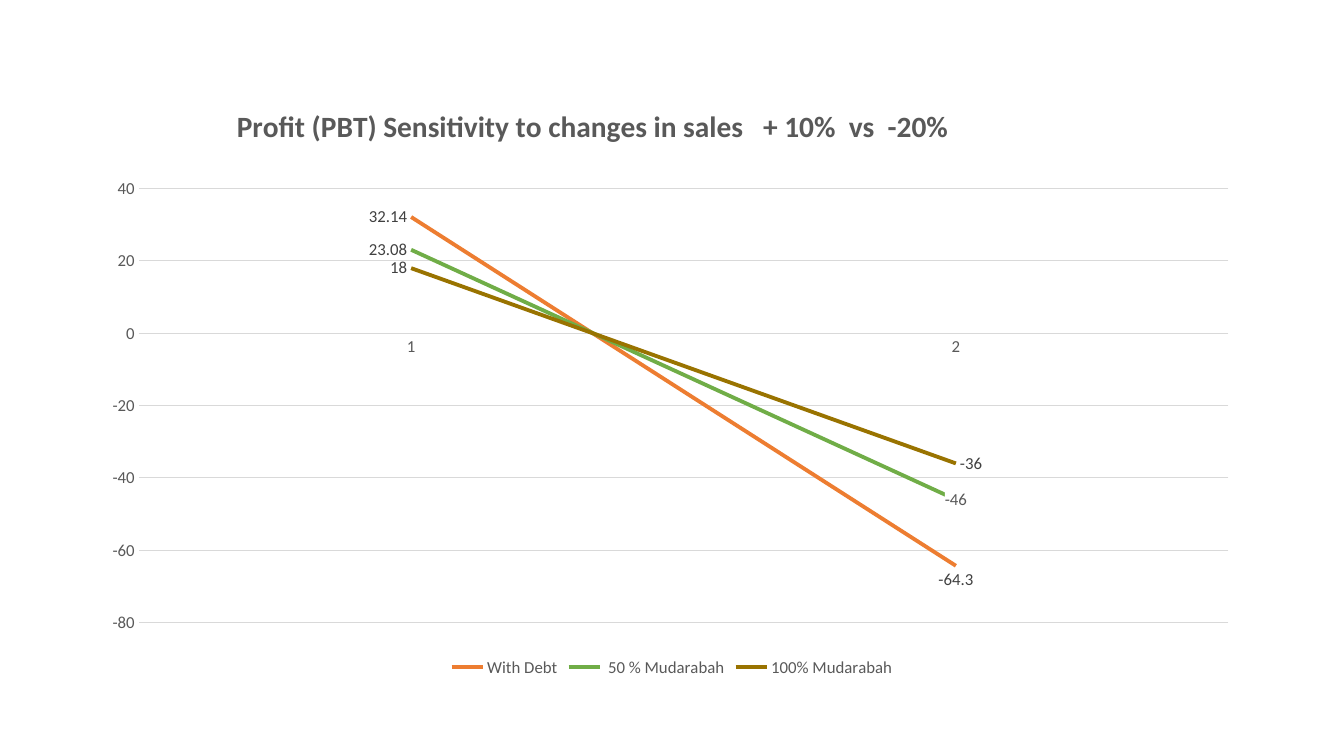
from dataclasses import dataclass
from typing import Optional

from lxml import etree
from pptx import Presentation
from pptx.chart.chart import Chart
from pptx.chart.data import CategoryChartData
from pptx.chart.series import LineSeries
from pptx.dml.color import RGBColor
from pptx.enum.chart import (
    XL_CHART_TYPE,
    XL_LABEL_POSITION,
    XL_LEGEND_POSITION,
    XL_MARKER_STYLE,
    XL_TICK_MARK,
)
from pptx.oxml import parse_xml
from pptx.oxml.ns import nsdecls, qn
from pptx.text.text import Font
from pptx.util import Pt

LINE_CHART = XL_CHART_TYPE.LINE
LABEL_CENTER = XL_LABEL_POSITION.CENTER
LABEL_BELOW = XL_LABEL_POSITION.BELOW
LABEL_LEFT = XL_LABEL_POSITION.LEFT
LABEL_RIGHT = XL_LABEL_POSITION.RIGHT
LEGEND_BOTTOM = XL_LEGEND_POSITION.BOTTOM
NO_MARKER = XL_MARKER_STYLE.NONE
NO_TICK = XL_TICK_MARK.NONE


@dataclass(frozen=True)
class Theme:
    font: str = "Calibri"
    title_size: float = 21
    text_size: float = 12
    text: str = "595959"
    label: str = "404040"
    grid: str = "D9D9D9"
    background: str = "FFFFFF"
    debt: str = "ED7D31"
    half_mudarabah: str = "70AD47"
    full_mudarabah: str = "997300"


@dataclass(frozen=True)
class ProfitLine:
    name: str
    values: tuple[float, float]
    color: str
    end_position: XL_LABEL_POSITION
    end_color: str
    end_fill: Optional[str] = None


THEME = Theme()
TITLE = "Profit (PBT) Sensitivity to changes in sales   + 10%  vs  -20%"
PROFIT_LINES = (
    ProfitLine("With Debt", (32.14, -64.3), THEME.debt, LABEL_BELOW, THEME.label),
    ProfitLine(" 50 % Mudarabah", (23.08, -46), THEME.half_mudarabah,
               LABEL_CENTER, THEME.text, THEME.background),
    ProfitLine("100% Mudarabah", (18, -36), THEME.full_mudarabah,
               LABEL_RIGHT, THEME.label),
)


def style_font(font: Font, size: float, color: str, bold: bool = False) -> None:
    font.name = THEME.font
    font.size = Pt(size)
    font.bold = bold
    font.color.rgb = RGBColor.from_string(color)


def set_layout(parent: etree._Element, index: int, **fractions: float) -> None:
    for layout in parent.findall(qn("c:layout")):
        parent.remove(layout)
    target = '<c:layoutTarget val="inner"/>' if "w" in fractions else ""
    modes = "".join(f'<c:{key}Mode val="edge"/>' for key in ("x", "y"))
    values = "".join(f'<c:{key} val="{value}"/>' for key, value in fractions.items())
    parent.insert(index, parse_xml(
        f'<c:layout {nsdecls("c")}><c:manualLayout>{target}{modes}{values}'
        "</c:manualLayout></c:layout>"
    ))


def add_title(chart: Chart) -> None:
    chart.has_title = True
    title = chart.chart_title
    paragraph = title.text_frame.paragraphs[0]
    paragraph.text = TITLE
    style_font(paragraph.font, THEME.title_size, THEME.text, bold=True)
    set_layout(title._element, 1, x=0.12, y=0.01)


def style_axes(chart: Chart) -> None:
    for axis in (chart.category_axis, chart.value_axis):
        axis.major_tick_mark = NO_TICK
        axis.minor_tick_mark = NO_TICK
        style_font(axis.tick_labels.font, THEME.text_size, THEME.text)
    category_line = chart.category_axis.format.line
    category_line.color.rgb = RGBColor.from_string(THEME.grid)
    category_line.width = Pt(1)
    value_axis = chart.value_axis
    value_axis.minimum_scale = -80
    value_axis.maximum_scale = 40
    value_axis.major_unit = 20
    value_axis.format.line.fill.background()
    value_axis.has_major_gridlines = True
    grid_line = value_axis.major_gridlines.format.line
    grid_line.color.rgb = RGBColor.from_string(THEME.grid)
    grid_line.width = Pt(0.75)


def style_series(series: LineSeries, profit_line: ProfitLine) -> None:
    series.smooth = False
    series.marker.style = NO_MARKER
    series.format.line.color.rgb = RGBColor.from_string(profit_line.color)
    series.format.line.width = Pt(2.75)
    labels = series.data_labels
    labels.show_value = True
    labels.position = LABEL_LEFT
    style_font(labels.font, THEME.text_size, THEME.label)
    end_label = series.points[1].data_label
    style_font(end_label.font, THEME.text_size, profit_line.end_color)
    end_label.position = profit_line.end_position
    if profit_line.end_fill:
        text_properties = labels._element.find(f'{qn("c:dLbl")}/{qn("c:txPr")}')
        text_properties.addprevious(parse_xml(
            f'<c:spPr {nsdecls("c", "a")}><a:solidFill>'
            f'<a:srgbClr val="{profit_line.end_fill}"/></a:solidFill></c:spPr>'
        ))


def main() -> None:
    presentation = Presentation()
    presentation.slide_width = Pt(960)
    presentation.slide_height = Pt(540)
    slide = presentation.slides.add_slide(presentation.slide_layouts[6])

    chart_data = CategoryChartData()
    chart_data.categories = ("1", "2")
    for profit_line in PROFIT_LINES:
        chart_data.add_series(profit_line.name, profit_line.values)
    chart = slide.shapes.add_chart(
        LINE_CHART, Pt(66), Pt(67.7), Pt(828), Pt(419), chart_data
    ).chart
    style_font(chart.font, THEME.text_size, THEME.text)

    add_title(chart)
    style_axes(chart)
    for series, profit_line in zip(chart.plots[0].series, PROFIT_LINES):
        style_series(series, profit_line)
    chart.has_legend = True
    chart.legend.position = LEGEND_BOTTOM
    chart.legend.include_in_layout = False
    style_font(chart.legend.font, THEME.text_size, THEME.text)
    plot_area = chart._chartSpace.find(f'{qn("c:chart")}/{qn("c:plotArea")}')
    set_layout(plot_area, 0, x=0.04, y=0.16, w=0.94, h=0.74)

    presentation.save("out.pptx")


if __name__ == "__main__":
    main()
